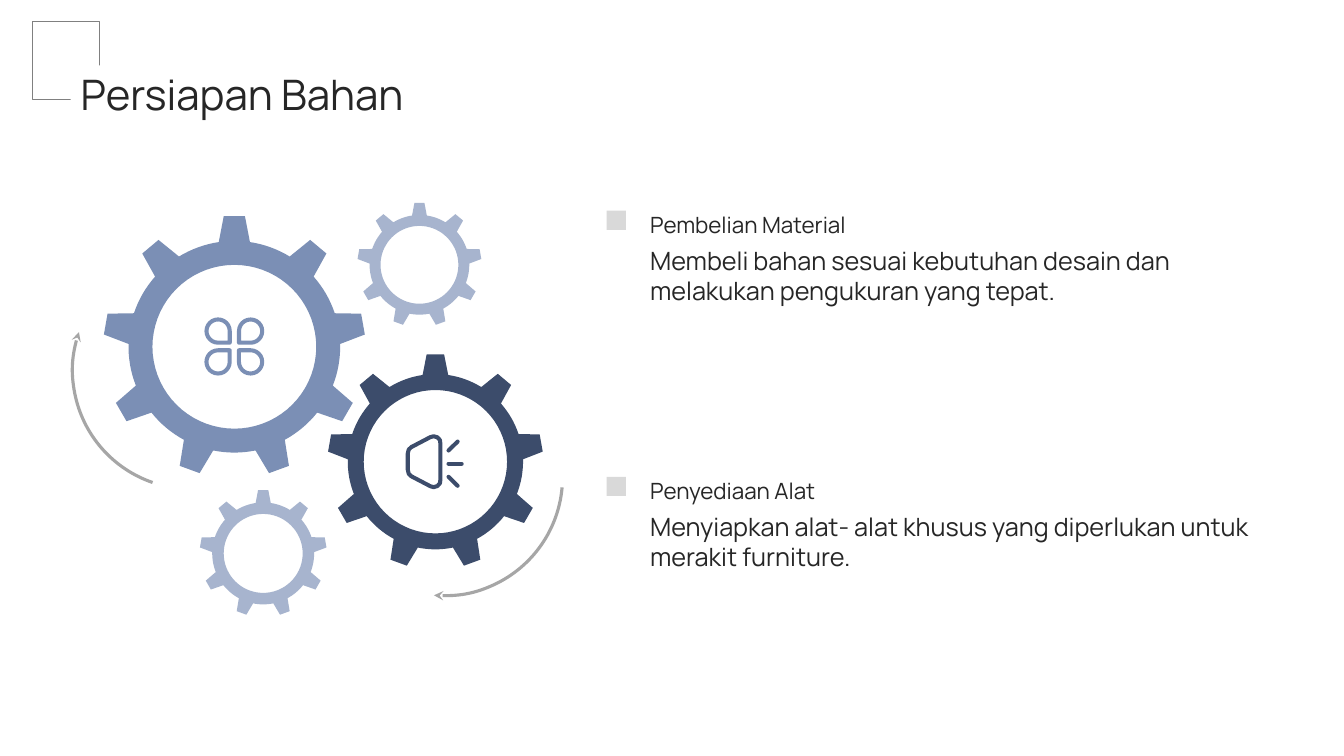
import math

from lxml import etree
from pptx import Presentation
from pptx.dml.color import RGBColor
from pptx.enum.shapes import MSO_CONNECTOR, MSO_SHAPE
from pptx.enum.text import MSO_ANCHOR
from pptx.oxml.ns import qn
from pptx.util import Pt

RECTANGLE, ARC, TEAR = MSO_SHAPE.RECTANGLE, MSO_SHAPE.ARC, MSO_SHAPE.TEAR
STRAIGHT = MSO_CONNECTOR.STRAIGHT
TOP, BOTTOM = MSO_ANCHOR.TOP, MSO_ANCHOR.BOTTOM

BLUE, PALE, NAVY = "7B8FB5", "A7B4CE", "3C4C6B"
WHITE, INK, ARROW_GRAY, FRAME_GRAY, MARKER_GRAY = "FFFFFF", "262626", "A6A6A6", "808080", "D9D9D9"
TEETH = 9
ICON_LINE = 2.9

prs = Presentation()
prs.slide_width, prs.slide_height = Pt(960), Pt(540)
shapes = prs.slides.add_slide(prs.slide_layouts[6]).shapes


def paint(shape, fill=None, line=None, width=0.75):
    """Give a shape a flat fill and line; None leaves either one out."""
    shape.shadow.inherit = False
    if fill:
        shape.fill.solid()
        shape.fill.fore_color.rgb = RGBColor.from_string(fill)
    else:
        shape.fill.background()
    if line:
        shape.line.color.rgb = RGBColor.from_string(line)
        shape.line.width = Pt(width)
    else:
        shape.line.fill.background()


def draw_outline(*contours):
    """Build one freeform from closed contours of (x, y) points."""
    contours = [[(Pt(x), Pt(y)) for x, y in contour] for contour in contours]
    builder = shapes.build_freeform(*contours[0][0], scale=1.0)
    for number, contour in enumerate(contours):
        if number:
            builder.move_to(*contour[0])
        builder.add_line_segments(contour[1:], close=True)
    return builder.convert_to_shape()


# Gears: centre, tip radius, body radius, hole radius
gears = [
    (167.4, 247.7, 93.6, 75.6, 58.5, BLUE),
    (188, 395.3, 45.4, 36.4, 28.2, PALE),
    (299.6, 189.2, 44.4, 35.6, 27.8, PALE),
    (311, 329.8, 77, 62.6, 51.2, NAVY),
]
for cx, cy, tip, body, hole, color in gears:
    tip_half = math.atan(0.081)
    root_half = math.asin(0.119 * tip / body)
    step = 2 * math.pi / TEETH
    valley = step - 2 * root_half
    polar = []
    for tooth in range(TEETH):
        middle = tooth * step
        polar += [(tip, middle - tip_half), (tip, middle + tip_half)]
        polar += [(body, middle + root_half + valley * i / 8) for i in range(9)]
    rim = [(cx + r * math.sin(a), cy - r * math.cos(a)) for r, a in polar]
    bore = [(cx + hole * math.sin(math.radians(a)), cy - hole * math.cos(math.radians(a)))
            for a in range(0, 360, 5)]
    paint(draw_outline(rim, bore), color)

# Turning arrows
for left, top, rotation in [(51.8, 180, 198.9), (232.6, 256.3, 94.9)]:
    arrow = shapes.add_shape(ARC, Pt(left), Pt(top), Pt(169.2), Pt(169.2))
    arrow.rotation = rotation
    paint(arrow, line=ARROW_GRAY, width=2.25)
    etree.SubElement(arrow.line._get_or_add_ln(), qn("a:tailEnd"), type="stealth")

# Four-petal icon in the blue gear
PETAL = 16.6
for dx, dy, rotation in [(-1, -1, 90), (1, -1, 180), (1, 1, 270), (-1, 1, 0)]:
    petal = shapes.add_shape(TEAR, Pt(167.4 + 11.6 * dx - PETAL / 2),
                             Pt(247.5 + 11 * dy - PETAL / 2), Pt(PETAL), Pt(PETAL))
    petal.rotation = rotation
    paint(petal, line=BLUE, width=ICON_LINE)

# Horn icon in the navy gear
horn_top = [(291.3, 324), (292, 321.2), (293.8, 319.4), (307.4, 312.3),
            (309.8, 311.6), (312.5, 312.4), (314.3, 314.4), (314.6, 317)]
horn_bottom = [(x, 2 * 329.8 - y) for x, y in reversed(horn_top)]
paint(draw_outline(horn_top + horn_bottom), line=NAVY, width=ICON_LINE)
for start_y, end_x, end_y in [(321.8, 326.9, 315.4), (331.2, 329.8, 331.2), (340.6, 326.9, 347)]:
    ray = shapes.add_connector(STRAIGHT, Pt(320.4), Pt(start_y), Pt(end_x), Pt(end_y))
    ray.line.color.rgb = RGBColor.from_string(NAVY)
    ray.line.width = Pt(ICON_LINE)
    ray.line._get_or_add_ln().set("cap", "rnd")
    etree.SubElement(ray._element.spPr, qn("a:effectLst"))

# Title frame with its covered corner, then the markers of the two steps
paint(shapes.add_shape(RECTANGLE, Pt(23), Pt(15.1), Pt(48.2), Pt(56.2)), line=FRAME_GRAY)
paint(shapes.add_shape(RECTANGLE, Pt(50.4), Pt(46.8), Pt(43.9), Pt(36)), WHITE)
for top in (150.5, 340.6):
    paint(shapes.add_shape(RECTANGLE, Pt(433.4), Pt(top), Pt(13.7), Pt(13.7)), MARKER_GRAY)

# Texts: left, top, width, height, size, anchor
texts = [
    (57.6, 49, 799.2, 33.1, 30, TOP, "Persiapan Bahan"),
    (464.4, 108.7, 442.8, 61.2, 16, BOTTOM, "Pembelian Material"),
    (464.4, 175, 442.8, 114.5, 18, TOP,
     "Membeli bahan sesuai kebutuhan desain dan melakukan pengukuran yang tepat."),
    (464.4, 298.8, 442.8, 61.2, 16, BOTTOM, "Penyediaan Alat"),
    (464.4, 365, 442.8, 114.5, 18, TOP,
     "Menyiapkan alat- alat khusus yang diperlukan untuk merakit furniture."),
]
for left, top, width, height, size, anchor, wording in texts:
    frame = shapes.add_textbox(Pt(left), Pt(top), Pt(width), Pt(height)).text_frame
    frame.word_wrap = True
    frame.vertical_anchor = anchor
    frame.margin_left = frame.margin_right = frame.margin_top = frame.margin_bottom = 0
    frame.text = wording
    font = frame.paragraphs[0].runs[0].font
    font.name, font.size = "Manrope", Pt(size)
    font.color.rgb = RGBColor.from_string(INK)

prs.save("out.pptx")
